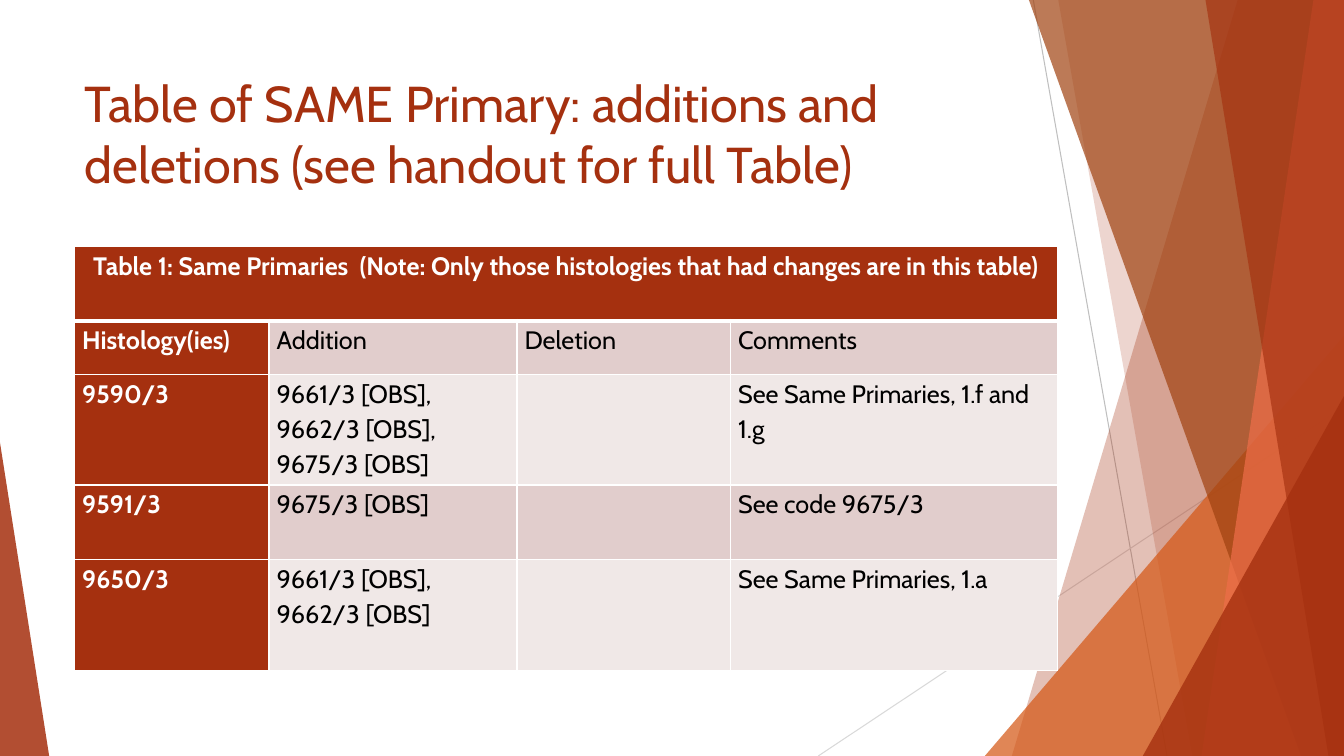
from lxml import etree
from pptx import Presentation
from pptx.dml.color import RGBColor
from pptx.enum import shapes, text
from pptx.oxml import ns
from pptx.util import Cm, Pt

W, H = 33.87, 19.05
RUST, WHITE, BLACK = "A5300F", "FFFFFF", "000000"
BANDS = ("F0E8E7", "E1CDCC")


def rgb(color):
    return RGBColor.from_string(color)


class Deck:
    font = "Cabin"

    def __init__(self):
        self.prs = Presentation()
        self.prs.slide_width, self.prs.slide_height = Cm(W), Cm(H)
        self.s = self.prs.slides.add_slide(self.prs.slide_layouts[5])

    def style(self, p, size, color, bold=False):
        f = p.font
        f.name, f.size, f.bold = self.font, Pt(size), bold
        f.color.rgb = rgb(color)

    def paint(self, sp, color, opacity):
        """Fill a shape with a translucent colour, without line or shadow."""
        sp.shadow.inherit = False
        sp.line.fill.background()
        sp.fill.solid()
        sp.fill.fore_color.rgb = rgb(color)
        clr = sp.fill._xPr.find(".//" + ns.qn("a:srgbClr"))
        etree.SubElement(clr, ns.qn("a:alpha"), val=str(opacity * 1000))

    def line(self, x1, y1, x2, y2, color):
        c = self.s.shapes.add_connector(
            shapes.MSO_CONNECTOR.STRAIGHT, Cm(x1), Cm(y1), Cm(x2), Cm(y2))
        c.line.color.rgb = rgb(color)
        c.line.width = Pt(0.75)
        etree.SubElement(c._element.spPr, ns.qn("a:effectLst"))

    def shard(self, top_x, bottom_x, color, opacity):
        """Full-height polygon from a slanted left edge to the slide's right edge."""
        fb = self.s.shapes.build_freeform(Cm(top_x), 0)
        fb.add_line_segments(
            [(Cm(W), 0), (Cm(W), Cm(H)), (Cm(bottom_x), Cm(H))])
        self.paint(fb.convert_to_shape(), color, opacity)

    def triangle(self, x, y, width, apex, color, opacity):
        """Triangle standing on the slide's bottom edge; apex 0 is left, 1 right."""
        sp = self.s.shapes.add_shape(
            shapes.MSO_SHAPE.ISOSCELES_TRIANGLE, Cm(x), Cm(y), Cm(width), Cm(H - y))
        sp.adjustments[0] = apex
        self.paint(sp, color, opacity)

    def title(self, words, x, y, w, h):
        sp = self.s.shapes.title
        sp.left, sp.top, sp.width, sp.height = Cm(x), Cm(y), Cm(w), Cm(h)
        self.s.shapes._spTree.append(sp._element)  # bring to front
        tf = sp.text_frame
        tf.text = words
        tf.word_wrap = True
        tf.auto_size = text.MSO_AUTO_SIZE.NONE
        tf.vertical_anchor = text.MSO_ANCHOR.TOP
        p = tf.paragraphs[0]
        p.alignment = text.PP_ALIGN.LEFT
        self.style(p, 36, RUST)

    def borders(self, cell, top, bottom):
        """White cell borders; top and bottom widths in points."""
        for side, width in zip("LRTB", (1, 1, top, bottom)):
            ln = etree.SubElement(cell._tc.get_or_add_tcPr(),
                                  ns.qn("a:ln" + side), w=str(Pt(width)))
            fill = etree.SubElement(ln, ns.qn("a:solidFill"))
            etree.SubElement(fill, ns.qn("a:srgbClr"), val=WHITE)

    def cell(self, cell, words, fill, color, bold):
        cell.fill.solid()
        cell.fill.fore_color.rgb = rgb(fill)
        cell.margin_left = cell.margin_right = Cm(0.19)
        cell.margin_top = cell.margin_bottom = 0
        cell.text = words
        p = cell.text_frame.paragraphs[0]
        p.line_spacing, p.space_after = 1.15, Pt(10)
        self.style(p, 18, color, bold)
        return p

    def table(self, caption, rows, x, y, widths, heights):
        t = self.s.shapes.add_table(
            len(heights), len(widths), Cm(x), Cm(y),
            Cm(sum(widths)), Cm(sum(heights))).table
        t.first_col = True
        for col, width in zip(t.columns, widths):
            col.width = Cm(width)
        for row, height in zip(t.rows, heights):
            row.height = Cm(height)
        blanks = [""] * (len(widths) - 1)
        for i, row in enumerate([[caption, *blanks], *rows]):
            for j, words in enumerate(row):
                c = t.cell(i, j)
                self.borders(c, 3 if i == 1 else 1, 3 if i == 0 else 1)
                head = i == 0 or j == 0
                p = self.cell(c, words, RUST if head else BANDS[i % 2],
                              WHITE if head else BLACK, head)
                if i == 0:
                    p.alignment = text.PP_ALIGN.CENTER
        t.cell(0, 0).merge(t.cell(0, len(widths) - 1))


def main():
    d = Deck()
    d.line(26.04, 0, 29.41, H, "BFBFBF")
    d.line(W, 10.24, 20.62, H, "D9D9D9")
    d.shard(31.19, 25.5, RUST, 30)
    d.shard(26.67, 30.05, RUST, 20)
    d.triangle(24.82, 8.46, W - 24.82, 1, "D55816", 72)
    d.shard(25.93, 32.79, "A04210", 70)
    d.shard(33.1, 30.28, "EE6E4A", 70)
    d.shard(30.38, 33.48, RUST, 65)
    d.triangle(28.8, 9.98, W - 28.8, 1, RUST, 80)
    d.triangle(0, 11.15, 1.24, 0, RUST, 85)

    d.title("Table of SAME Primary: additions and deletions "
            "(see handout for full Table)", 1.88, 1.7, 23.88, 3.66)
    d.table(
        "Table 1: Same Primaries  (Note: Only those histologies "
        "that had changes are in this table)",
        [["Histology(ies)", "Addition", "Deletion", "Comments"],
         ["9590/3", "9661/3 [OBS], 9662/3 [OBS], 9675/3 [OBS]", "",
          "See Same Primaries, 1.f and 1.g"],
         ["9591/3", "9675/3 [OBS]", "", "See code 9675/3"],
         ["9650/3", "9661/3 [OBS], 9662/3 [OBS]", "",
          "See Same Primaries, 1.a"]],
        1.88, 6.2, (4.9, 6.25, 5.38, 8.23), (1.88, 1.35, 2.79, 1.88, 2.79))
    d.prs.save("out.pptx")


if __name__ == "__main__":
    main()
